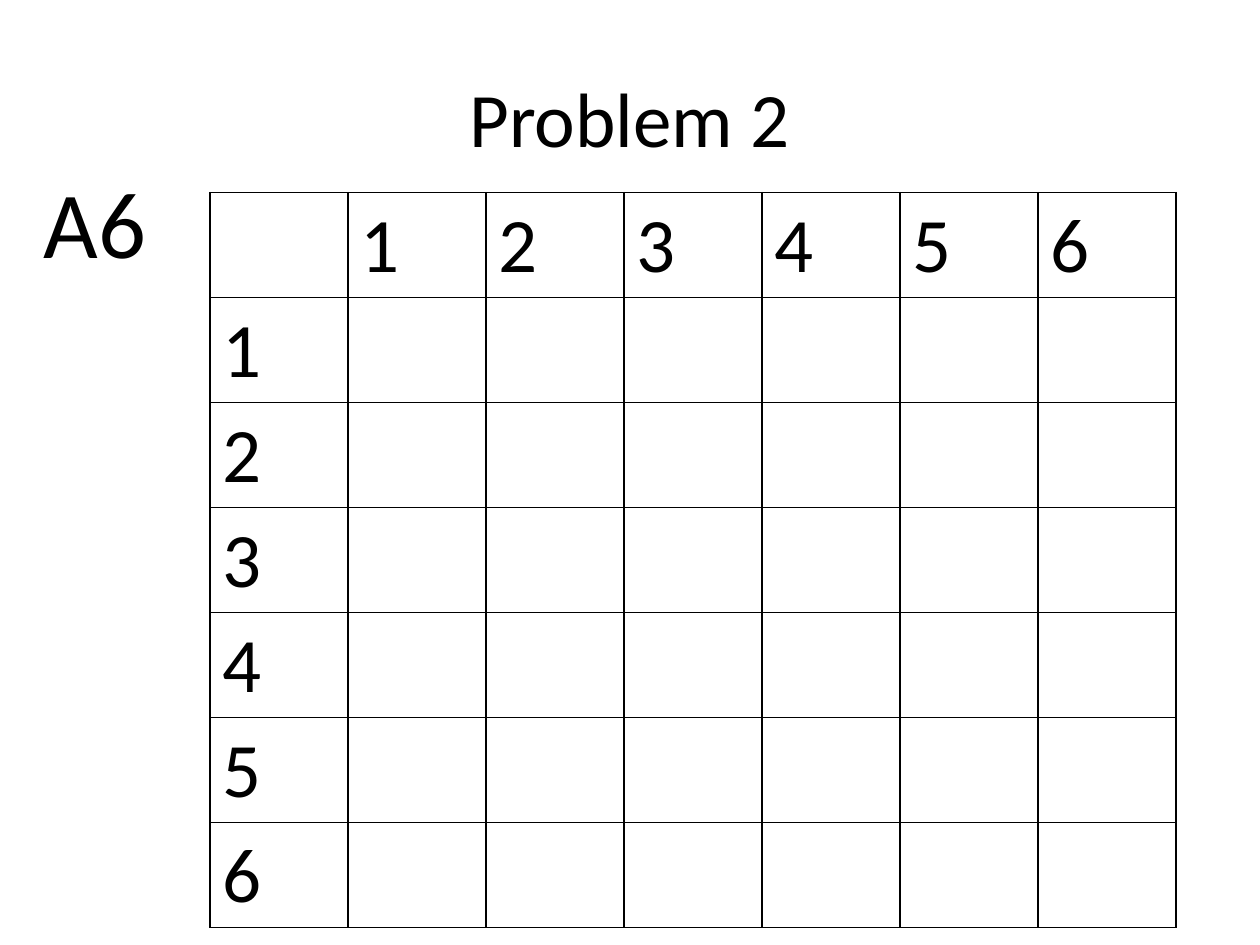
from dataclasses import dataclass

from lxml import etree
from pptx import Presentation
from pptx.dml.color import RGBColor
from pptx.enum.text import MSO_ANCHOR, PP_ALIGN
from pptx.oxml.ns import qn
from pptx.util import Pt

LEFT, CENTER = PP_ALIGN.LEFT, PP_ALIGN.CENTER
TOP, MIDDLE = MSO_ANCHOR.TOP, MSO_ANCHOR.MIDDLE
BLANK_LAYOUT = 6
FONT = "Calibri"
INK = "000000"
NUMBERS = 6
COLUMN_WIDTH, ROW_HEIGHT = 78.86, 60
NUMBER_SIZE = 44
BORDER_SIDES = ("a:lnL", "a:lnR", "a:lnT", "a:lnB")


@dataclass(frozen=True)
class Label:
    text: str
    left: float
    top: float
    width: float
    height: float
    size: float
    align: PP_ALIGN
    anchor: MSO_ANCHOR


LABELS = (
    Label("Problem 2", 36, 21.6, 648, 90, 44, CENTER, MIDDLE),
    Label("A6", 18, 90, 132, 72.7, 54, LEFT, TOP),
)


def color(value: str) -> RGBColor:
    return RGBColor.from_string(value)


def style_paragraph(paragraph, size: float) -> None:
    paragraph.font.name = FONT
    paragraph.font.size = Pt(size)
    paragraph.font.color.rgb = color(INK)


def draw_label(slide, label: Label) -> None:
    box = slide.shapes.add_textbox(
        Pt(label.left), Pt(label.top), Pt(label.width), Pt(label.height)
    )
    frame = box.text_frame
    frame.word_wrap = True
    frame.vertical_anchor = label.anchor
    paragraph = frame.paragraphs[0]
    paragraph.text = label.text
    paragraph.alignment = label.align
    style_paragraph(paragraph, label.size)


def outline_cell(cell) -> None:
    properties = cell._tc.get_or_add_tcPr()
    for position, side in enumerate(BORDER_SIDES):
        line = etree.Element(qn(side), w=str(Pt(1)))
        fill = etree.SubElement(line, qn("a:solidFill"))
        etree.SubElement(fill, qn("a:srgbClr"), val=INK)
        properties.insert(position, line)


def draw_number_grid(slide, left: float, top: float) -> None:
    count = NUMBERS + 1
    grid = slide.shapes.add_table(
        count, count, Pt(left), Pt(top),
        Pt(COLUMN_WIDTH * count), Pt(ROW_HEIGHT * count),
    ).table
    grid.first_row = False
    grid.horz_banding = False
    for column in grid.columns:
        column.width = Pt(COLUMN_WIDTH)
    for row in grid.rows:
        row.height = Pt(ROW_HEIGHT)
    for cell in grid.iter_cells():
        cell.fill.background()
        outline_cell(cell)
    for number in range(1, count):
        for header in (grid.cell(0, number), grid.cell(number, 0)):
            header.text = str(number)
            style_paragraph(header.text_frame.paragraphs[0], NUMBER_SIZE)


def main() -> None:
    presentation = Presentation()
    presentation.slide_width = Pt(720)
    presentation.slide_height = Pt(540)
    slide = presentation.slides.add_slide(presentation.slide_layouts[BLANK_LAYOUT])
    for label in LABELS:
        draw_label(slide, label)
    draw_number_grid(slide, 120, 110)
    presentation.save("out.pptx")


if __name__ == "__main__":
    main()
